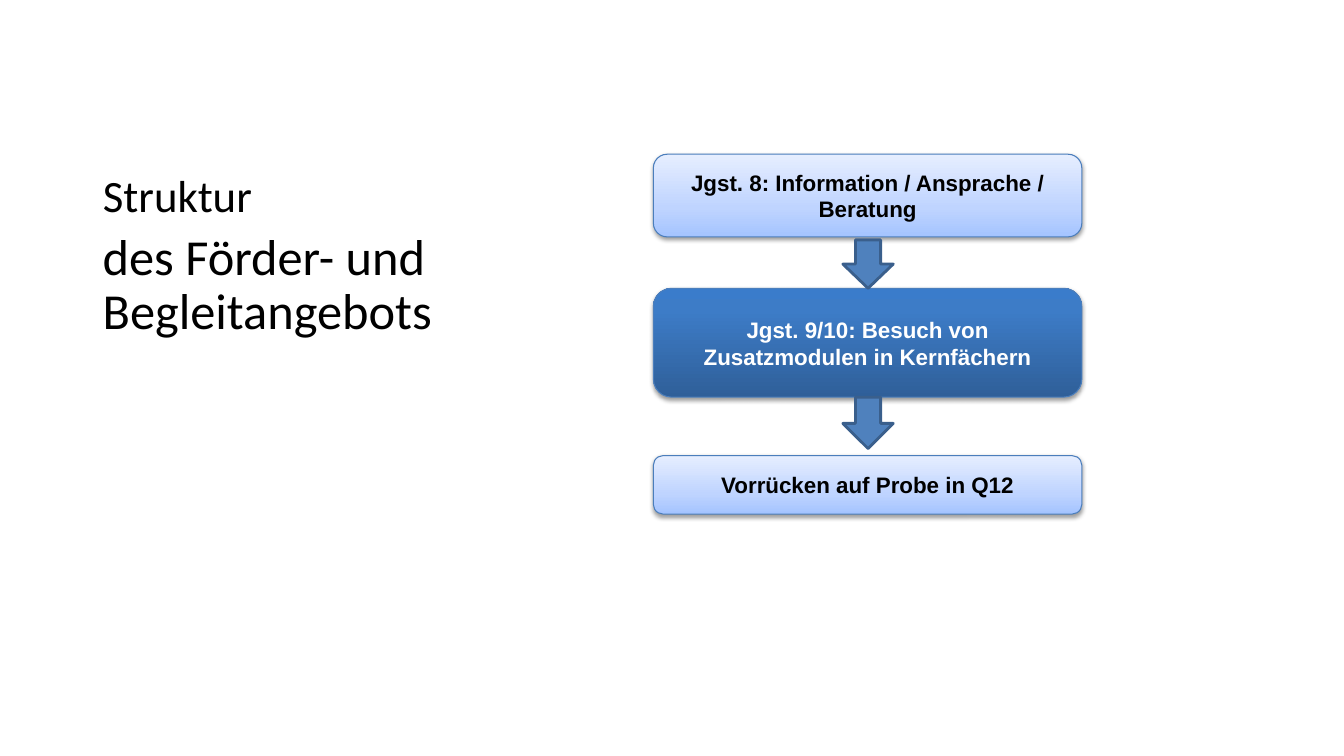
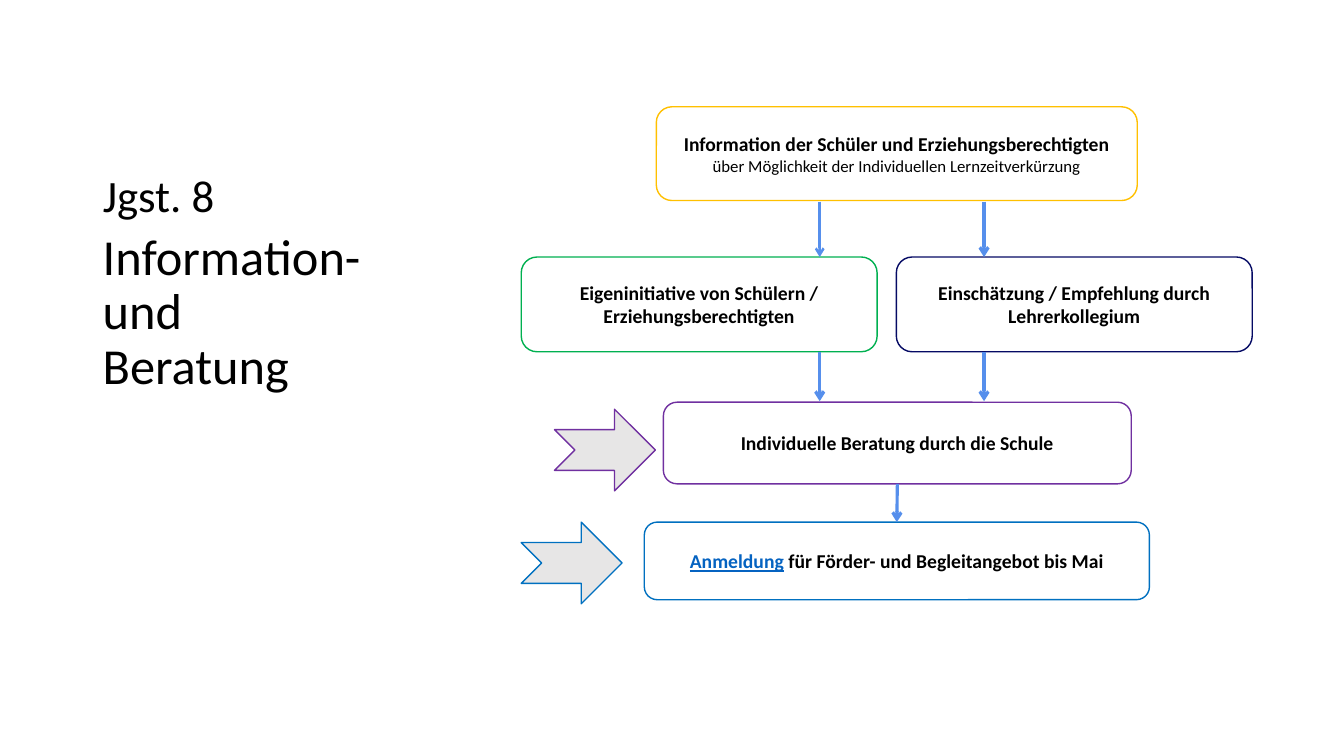
from lxml import etree
from pptx import Presentation
from pptx.dml.color import RGBColor
from pptx.enum.shapes import MSO_CONNECTOR, MSO_SHAPE
from pptx.enum.text import MSO_ANCHOR, MSO_AUTO_SIZE, PP_ALIGN
from pptx.oxml.ns import qn
from pptx.util import Inches, Pt

ROUND = MSO_SHAPE.ROUNDED_RECTANGLE
DOWN = MSO_SHAPE.DOWN_ARROW
NOTCH = MSO_SHAPE.NOTCHED_RIGHT_ARROW
STRAIGHT = MSO_CONNECTOR.STRAIGHT
TOP, MIDDLE, BOTTOM = MSO_ANCHOR.TOP, MSO_ANCHOR.MIDDLE, MSO_ANCHOR.BOTTOM
LEFT, CENTER = PP_ALIGN.LEFT, PP_ALIGN.CENTER
FIXED = MSO_AUTO_SIZE.NONE

COLORS = {
    "black": "000000", "white": "FFFFFF", "gray": "E7E6E6",
    "arrow": "4F81BD", "edge": "3A5F8C", "border": "4B7EBC",
    "line": "568FEC", "link": "0563C1", "gold": "FFC000",
    "green": "00B050", "navy": "050A64", "purple": "7030A0", "blue": "0070C0",
    "pale low": "A4C4FF", "pale mid": "BFD4FF", "pale high": "E6EEFF",
    "dark low": "2F5F99", "dark mid": "3D7CC7", "dark high": "3A7CCB",
}
PALE = [(0, "pale low"), (35, "pale mid"), (100, "pale high")]
DARK = [(0, "dark low"), (80, "dark mid"), (100, "dark high")]


def color(name):
    """Return the named colour."""
    return RGBColor.from_string(COLORS[name])


def add(parent, tag, **attrs):
    """Append a drawing element with the given attributes."""
    return etree.SubElement(parent, qn(tag), {k: str(v) for k, v in attrs.items()})


class Deck:
    """Hold the style and the current slide."""

    def __init__(self):
        """Start an empty wide presentation."""
        self.prs = Presentation()
        self.prs.slide_width = Inches(13.33)
        self.prs.slide_height = Inches(7.5)

    def style(self, run, size, tint="black", bold=False, font="Calibri"):
        """Format one run."""
        run.font.name = font
        run.font.size = Pt(size)
        run.font.bold = bold
        run.font.color.rgb = color(tint)

    def head(self, shape, text, size, anchor):
        """Fill a heading shape with plain text."""
        frame = shape.text_frame
        frame.word_wrap = True
        frame.auto_size = FIXED
        frame.vertical_anchor = anchor
        frame.text = text
        para = frame.paragraphs[0]
        para.alignment = LEFT
        para.line_spacing = 0.9
        for run in para.runs:
            self.style(run, size)

    def slide(self, title, body):
        """Add a slide with its title and the text below it."""
        page = self.prs.slides.add_slide(self.prs.slide_layouts[5])
        self.shapes = page.shapes
        name = self.shapes.title
        name.left, name.top = Inches(0.92), Inches(0.5)
        name.width, name.height = Inches(4.3), Inches(1.75)
        self.head(name, title, 32, BOTTOM)
        text = self.shapes.add_textbox(
            Inches(0.92), Inches(2.25), Inches(4.3), Inches(4.17))
        self.head(text, body, 36, TOP)

    def shape(self, kind, at, fill, line, width=1):
        """Add a preset shape with a plain fill and outline."""
        shape = self.shapes.add_shape(kind, *map(Inches, at))
        shape.shadow.inherit = False
        shape.fill.solid()
        shape.fill.fore_color.rgb = color(fill)
        shape.line.color.rgb = color(line)
        shape.line.width = Pt(width)
        return shape

    def label(self, shape, text, size, tint="black", font="Calibri"):
        """Put bold centred text into a shape."""
        frame = shape.text_frame
        frame.word_wrap = True
        frame.vertical_anchor = MIDDLE
        frame.text = text
        para = frame.paragraphs[0]
        para.alignment = CENTER
        self.style(para.runs[0], size, tint, True, font)

    def box(self, at, line, text, note=None):
        """Add an outlined box with a bold text and an optional note."""
        box = self.shape(ROUND, at, "white", line)
        self.label(box, text, 14)
        if note:
            para = box.text_frame.add_paragraph()
            para.text = note
            para.alignment = CENTER
            self.style(para.runs[0], 12)
        return box

    def step(self, top, height, stops, text, tint="black"):
        """Add a shaded step with a soft shadow."""
        step = self.shape(ROUND, (6.48, top, 4.25, height), "white", "border", 0.75)
        step.fill.gradient()
        step.fill.gradient_angle = 90
        props = step._element.spPr
        ramp = props.find(".//" + qn("a:gsLst"))
        for old in list(ramp):
            ramp.remove(old)
        for pos, shade in stops:
            add(add(ramp, "a:gs", pos=pos * 1000), "a:srgbClr", val=COLORS[shade])
        glow = add(props.find(qn("a:effectLst")), "a:outerShdw", blurRad=Pt(3.1),
                   dist=Pt(1.6), dir=5400000, rotWithShape=0)
        add(add(glow, "a:srgbClr", val=COLORS["black"]), "a:alpha", val=38000)
        self.label(step, text, 16, tint, "Arial")

    def link(self, x, start, end, width=2.25):
        """Add a downward arrow line."""
        link = self.shapes.add_connector(
            STRAIGHT, Inches(x), Inches(start), Inches(x), Inches(end))
        link.line.color.rgb = color("line")
        link.line.width = Pt(width)
        props = link._element.spPr
        add(props.find(qn("a:ln")), "a:tailEnd", type="arrow")
        add(props, "a:effectLst")
        return link


def main():
    """Build both slides."""
    deck = Deck()

    deck.slide("Struktur", "des Förder- und Begleitangebots")
    deck.step(1.53, 0.82, PALE, "Jgst. 8: Information / Ansprache / Beratung")
    deck.step(2.86, 1.08, DARK,
              "Jgst. 9/10: Besuch von Zusatzmodulen in Kernfächern", "white")
    deck.step(4.52, 0.58, PALE, "Vorrücken auf Probe in Q12")
    for top, height in ((2.38, 0.48), (3.94, 0.51)):
        deck.shape(DOWN, (8.36, top, 0.5, height), "arrow", "edge", 2)

    deck.slide("Jgst. 8", "Information-\vund\vBeratung")
    deck.box((6.51, 1.06, 4.77, 0.93), "gold",
             "Information der Schüler und Erziehungsberechtigten",
             "über Möglichkeit der Individuellen Lernzeitverkürzung")
    deck.box((5.17, 2.55, 3.53, 0.94), "green",
             "Eigeninitiative von Schülern / Erziehungsberechtigten")
    deck.box((8.89, 2.55, 3.53, 0.94), "navy",
             "Einschätzung / Empfehlung durch Lehrerkollegium")
    talk = deck.box((6.58, 3.99, 4.64, 0.81), "purple",
                    "Individuelle Beratung durch die Schule")
    entry = deck.box((6.39, 5.18, 5.01, 0.77), "blue", "Anmeldung")
    para = entry.text_frame.paragraphs[0]
    deck.style(para.runs[0], 14, "link", True)
    para.runs[0].font.underline = True
    rest = para.add_run()
    rest.text = " für Förder- und Begleitangebot bis Mai"
    deck.style(rest, 14, bold=True)

    for x, width in ((8.13, 1.75), (9.76, 2.25)):
        deck.link(x, 2, 2.55, width)
        deck.link(x, 3.49, 3.98)
    last = deck.link(8.9, 4.8, 5.18)
    last.begin_connect(talk, 2)
    last.end_connect(entry, 0)
    for left, top, line in ((5.5, 4.06, "purple"), (5.17, 5.18, "blue")):
        deck.shape(NOTCH, (left, top, 1, 0.81), "gray", line)

    deck.prs.save("out.pptx")


if __name__ == "__main__":
    main()
